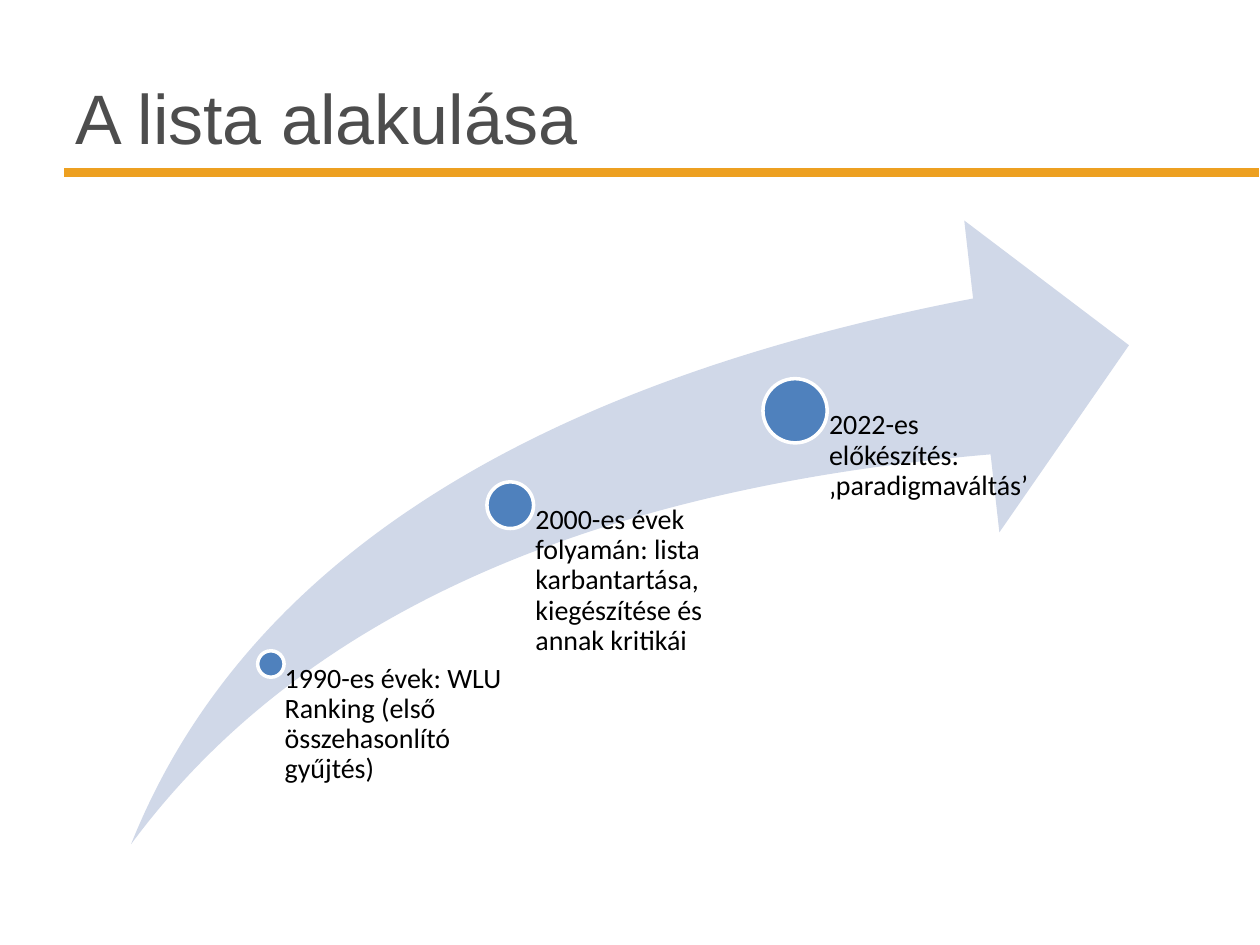
from dataclasses import dataclass

from pptx import Presentation
from pptx.dml.color import RGBColor
from pptx.enum.shapes import MSO_SHAPE
from pptx.enum.text import MSO_ANCHOR
from pptx.util import Inches, Pt

ARROW_BOTTOM = 6.7


@dataclass
class Milestone:
    """A dot on the arrow; its label hangs from the dot's centre."""
    cx: float
    cy: float
    diameter: float
    label_width: float
    label: str


MILESTONES = [
    Milestone(2.15, 5.27, 0.21, 1.85,
              "1990-es évek: WLU Ranking (első összehasonlító gyűjtés)"),
    Milestone(4.05, 4.01, 0.37, 1.9,
              "2000-es évek folyamán: lista karbantartása, kiegészítése és annak kritikái"),
    Milestone(6.31, 3.26, 0.51, 1.9,
              "2022-es előkészítés: ‚paradigmaváltás’"),
]


def rgb(value: str) -> RGBColor:
    return RGBColor.from_string(value)


def add_filled(s, kind, left: float, top: float, width: float, height: float,
               fill: str, line_width: float = 0):
    """Add a flat shape, with a white outline if line_width is given."""
    sp = s.shapes.add_shape(kind, Inches(left), Inches(top), Inches(width), Inches(height))
    sp.shadow.inherit = False
    sp.fill.solid()
    sp.fill.fore_color.rgb = rgb(fill)
    if line_width:
        sp.line.color.rgb = rgb("FFFFFF")
        sp.line.width = Pt(line_width)
    else:
        sp.line.fill.background()
    return sp


def add_text(s, left: float, top: float, width: float, height: float, text: str,
             font: dict, color: str, frame: dict, line_spacing: float = 1.0) -> None:
    box = s.shapes.add_textbox(Inches(left), Inches(top), Inches(width), Inches(height))
    tf = box.text_frame
    for name, value in {"word_wrap": True, **frame}.items():
        setattr(tf, name, value)
    p = tf.paragraphs[0]
    p.line_spacing = line_spacing
    r = p.add_run()
    r.text = text
    for name, value in font.items():
        setattr(r.font, name, value)
    r.font.color.rgb = rgb(color)


def add_milestone(s, m: Milestone) -> None:
    radius = m.diameter / 2
    add_filled(s, MSO_SHAPE.OVAL, m.cx - radius, m.cy - radius,
               m.diameter, m.diameter, "4F81BD", 2)
    frame = {"margin_left": Inches(round(m.diameter * 0.53, 2)),
             "margin_top": 0, "margin_right": 0, "margin_bottom": 0}
    add_text(s, m.cx, m.cy, m.label_width, ARROW_BOTTOM - m.cy, m.label,
             {"name": "Calibri", "size": Pt(16)}, "000000", frame, 0.9)


def main() -> None:
    prs = Presentation()
    prs.slide_width, prs.slide_height = Inches(10), Inches(7.5)
    s = prs.slides.add_slide(prs.slide_layouts[6])

    add_filled(s, MSO_SHAPE.RECTANGLE, 0.5, 1.33, 9.5, 0.08, "EDA021", 0.75)
    add_text(s, 0.5, 0.3, 9, 1.25, "A lista alakulása",
             {"name": "Arial", "size": Pt(40)}, "4D4D4D",
             {"vertical_anchor": MSO_ANCHOR.MIDDLE})

    arrow = add_filled(s, MSO_SHAPE.SWOOSH_ARROW, 1.04, 1.75, 7.92,
                       ARROW_BOTTOM - 1.75, "D0D8E8")
    for i in range(2):
        arrow.adjustments[i] = 0.25
    for m in MILESTONES:
        add_milestone(s, m)

    prs.save("out.pptx")


if __name__ == "__main__":
    main()
